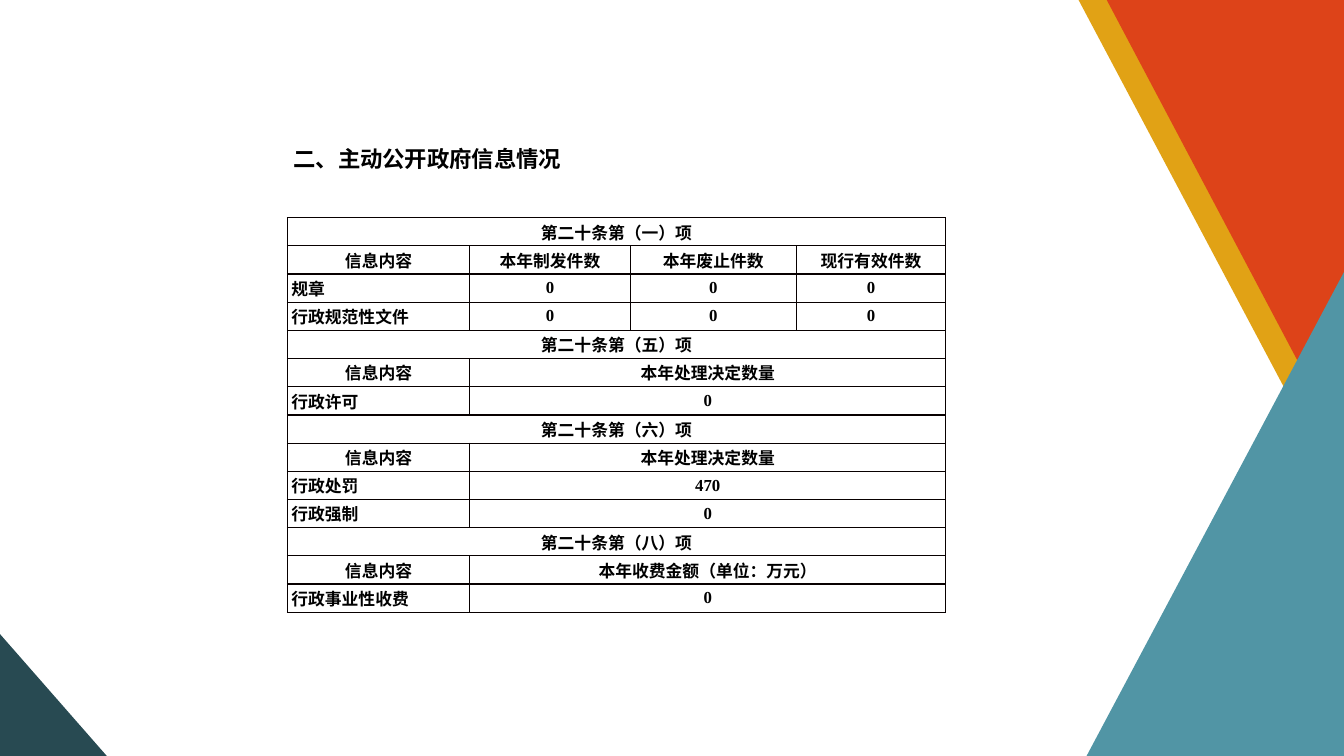
"""Build the slide on information a government body published on its own initiative."""
from lxml import etree
from pptx import Presentation
from pptx import util as u
from pptx.dml.color import RGBColor
from pptx.enum import text
from pptx.oxml import ns

GOLD = RGBColor(0xE1, 0xA2, 0x15)
RED = RGBColor(0xDD, 0x43, 0x19)
TEAL = RGBColor(0x51, 0x95, 0xA5)
DARK_TEAL = RGBColor(0x28, 0x4A, 0x52)
BLACK = RGBColor(0, 0, 0)
BORDER = RGBColor(0x08, 0, 0)
WHITE = RGBColor(0xFF, 0xFF, 0xFF)

TRIANGLES = [
    (GOLD, [(97.95, 59.33), (97.95, 0), (80.25, 0)]),
    (RED, [(100, 59.33), (100, 0), (82.35, 0)]),
    (TEAL, [(100, 36), (100, 100), (80.85, 100)]),
    (DARK_TEAL, [(0, 83.87), (0, 100), (7.95, 100)]),
]
COLUMNS = [13.58, 11.93, 12.38, 11.1]
SUBJECT = "信息内容"
ROWS = [
    ["第二十条第（一）项"],
    [SUBJECT, "本年制发件数", "本年废止件数", "现行有效件数"],
    ["规章", "0", "0", "0"],
    ["行政规范性文件", "0", "0", "0"],
    ["第二十条第（五）项"],
    [SUBJECT, "本年处理决定数量"],
    ["行政许可", "0"],
    ["第二十条第（六）项"],
    [SUBJECT, "本年处理决定数量"],
    ["行政处罚", "470"],
    ["行政强制", "0"],
    ["第二十条第（八）项"],
    [SUBJECT, "本年收费金额（单位：万元）"],
    ["行政事业性收费", "0"],
]


class Page:
    """Draw styled elements on a grid of 100 columns by 100 rows."""

    def __init__(self, deck):
        self.column = deck.slide_width / 100
        self.row = deck.slide_height / 100
        self.page = deck.slides.add_slide(deck.slide_layouts[5])

    def across(self, columns):
        return u.Emu(round(columns * self.column))

    def down(self, rows):
        return u.Emu(round(rows * self.row))

    def style(self, para, font, size):
        for span in para.runs:
            span.font.name = font
            span.font.size = u.Pt(size)
            span.font.bold = True
            span.font.color.rgb = BLACK

    def triangle(self, color, corners):
        first, *others = [(self.across(x), self.down(y)) for x, y in corners]
        builder = self.page.shapes.build_freeform(*first)
        builder.add_line_segments(others, close=True)
        shape = builder.convert_to_shape()
        shape.shadow.inherit = False
        shape.fill.solid()
        shape.fill.fore_color.rgb = color
        shape.line.fill.background()

    def title(self, wording, left, top, width, height, indent):
        box = self.page.shapes.title
        box.left, box.top = self.across(left), self.down(top)
        box.width, box.height = self.across(width), self.down(height)
        frame = box.text_frame
        frame.text = wording
        frame.word_wrap = True
        frame.auto_size = text.MSO_AUTO_SIZE.NONE
        frame.vertical_anchor = text.MSO_ANCHOR.MIDDLE
        para = frame.paragraphs[0]
        para.alignment = text.PP_ALIGN.LEFT
        para._p.get_or_add_pPr().set("indent", str(self.across(indent)))
        self.style(para, "Arial", 16)

    def border(self, cell):
        properties = cell._tc.get_or_add_tcPr()
        for side in ("lnL", "lnR", "lnT", "lnB"):
            line = etree.SubElement(properties, ns.qn(f"a:{side}"), w=str(u.Pt(1)))
            fill = etree.SubElement(line, ns.qn("a:solidFill"))
            etree.SubElement(fill, ns.qn("a:srgbClr"), val=str(BORDER))

    def cell(self, cell, wording, alignment):
        cell.text_frame.text = wording
        cell.vertical_anchor = text.MSO_ANCHOR.MIDDLE
        cell.margin_left = cell.margin_right = u.Inches(0.04)
        cell.margin_top = cell.margin_bottom = 0
        para = cell.text_frame.paragraphs[0]
        para.alignment = alignment
        self.style(para, "Times New Roman", 12)

    def table(self, rows, columns, left, top, row_height):
        table = self.page.shapes.add_table(
            len(rows), len(columns), self.across(left), self.down(top),
            self.across(sum(columns)), self.down(row_height * len(rows))).table
        table.first_row = table.horz_banding = False
        for column, width in zip(table.columns, columns):
            column.width = self.across(width)
        last = len(columns) - 1
        for r, words in enumerate(rows):
            table.rows[r].height = self.down(row_height)
            for c in range(len(columns)):
                cell = table.cell(r, c)
                self.border(cell)
                cell.fill.solid()
                cell.fill.fore_color.rgb = WHITE
            for c, wording in enumerate(words):
                label = c == 0 and len(words) > 1 and wording != SUBJECT
                alignment = text.PP_ALIGN.LEFT if label else text.PP_ALIGN.CENTER
                self.cell(table.cell(r, c), wording, alignment)
            if len(words) <= last:
                table.cell(r, len(words) - 1).merge(table.cell(r, last))


def main():
    deck = Presentation()
    deck.slide_width, deck.slide_height = u.Inches(13.33), u.Inches(7.5)
    page = Page(deck)
    for color, corners in TRIANGLES:
        page.triangle(color, corners)
    page.title("二、主动公开政府信息情况", 17.7, 18.53, 41.7, 4.93, indent=3.38)
    page.table(ROWS, COLUMNS, left=21.38, top=28.8, row_height=3.73)
    deck.save("out.pptx")


if __name__ == "__main__":
    main()
